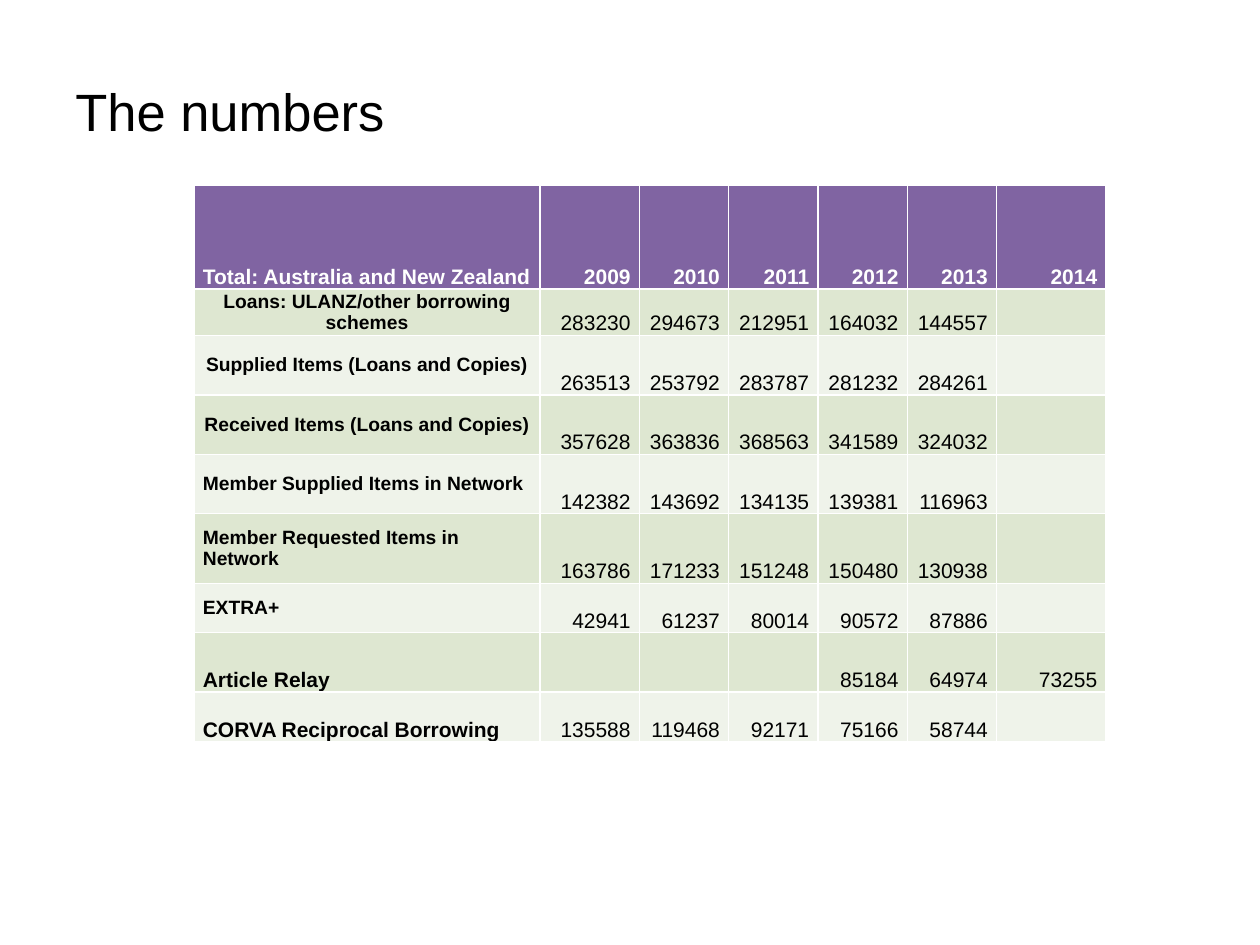
from pptx import Presentation
from pptx import util as u
from pptx.dml.color import RGBColor
from pptx.enum import text

COLORS = {"ink": "000000", "paper": "FFFFFF", "header": "8064A2",
          "odd": "DEE7D1", "even": "EFF3EA"}
FONT = "Arial"
WIDTH, HEIGHT = u.Inches(10), u.Inches(7.5)

# Relative column widths and row heights, scaled to the table's box
COLUMNS = [2.75, 0.79, 0.71, 0.71, 0.71, 0.71, 0.87]
ROWS = [0.82, 0.36, 0.47, 0.47, 0.47, 0.55, 0.39, 0.47, 0.39]

LEFT, CENTER, RIGHT = (text.PP_ALIGN.LEFT, text.PP_ALIGN.CENTER,
                       text.PP_ALIGN.RIGHT)
MIDDLE, BOTTOM = text.MSO_ANCHOR.MIDDLE, text.MSO_ANCHOR.BOTTOM

HEADER = ["Total: Australia and New Zealand",
          2009, 2010, 2011, 2012, 2013, 2014]
# Label, its size, alignment and anchor, then the yearly values
SERVICES = [
    ("Loans: ULANZ/other borrowing schemes", 11, CENTER, MIDDLE,
     [283230, 294673, 212951, 164032, 144557, ""]),
    ("Supplied Items (Loans and Copies)", 11, CENTER, MIDDLE,
     [263513, 253792, 283787, 281232, 284261, ""]),
    ("Received Items (Loans and Copies)", 11, CENTER, MIDDLE,
     [357628, 363836, 368563, 341589, 324032, ""]),
    ("Member Supplied Items in Network", 11, LEFT, MIDDLE,
     [142382, 143692, 134135, 139381, 116963, ""]),
    ("Member Requested Items in Network", 11, LEFT, MIDDLE,
     [163786, 171233, 151248, 150480, 130938, ""]),
    ("EXTRA+", 11, LEFT, MIDDLE,
     [42941, 61237, 80014, 90572, 87886, ""]),
    ("Article Relay", 12, LEFT, BOTTOM,
     ["", "", "", 85184, 64974, 73255]),
    ("CORVA Reciprocal Borrowing", 12, LEFT, BOTTOM,
     [135588, 119468, 92171, 75166, 58744, ""]),
]


def share_box(left, top, width, height):
    """Turn shares of the slide's size into lengths."""
    return (int(left * WIDTH), int(top * HEIGHT),
            int(width * WIDTH), int(height * HEIGHT))


def style_paragraph(p, size, color, bold=False, align=LEFT):
    p.alignment = align
    p.font.name = FONT
    p.font.size = u.Pt(size)
    p.font.bold = bold
    p.font.color.rgb = RGBColor.from_string(COLORS[color])


def add_title(slide, box, words):
    tf = slide.shapes.add_textbox(*box).text_frame
    tf.word_wrap = True
    tf.margin_top = u.Inches(0.1)
    p = tf.paragraphs[0]
    p.text = words
    style_paragraph(p, 30, "ink")


def fill_cell(cell, value, fill, size=12, color="ink", bold=False,
              align=RIGHT, anchor=BOTTOM):
    cell.fill.solid()
    cell.fill.fore_color.rgb = RGBColor.from_string(COLORS[fill])
    cell.margin_left = cell.margin_right = u.Inches(0.07)
    cell.margin_top = cell.margin_bottom = 0
    cell.vertical_anchor = anchor
    p = cell.text_frame.paragraphs[0]
    if value != "":
        p.text = str(value)
    style_paragraph(p, size, color, bold, align)


def add_numbers_table(slide, box):
    table = slide.shapes.add_table(len(ROWS), len(COLUMNS), *box).table
    for column, weight in zip(table.columns, COLUMNS):
        column.width = int(box[2] * weight / sum(COLUMNS))
    for row, weight in zip(table.rows, ROWS):
        row.height = int(box[3] * weight / sum(ROWS))

    for c, value in enumerate(HEADER):
        fill_cell(table.cell(0, c), value, "header", color="paper", bold=True,
                  align=RIGHT if c else LEFT)
    for r, (label, size, align, anchor, values) in enumerate(SERVICES, 1):
        band = "odd" if r % 2 else "even"
        fill_cell(table.cell(r, 0), label, band, size, bold=True,
                  align=align, anchor=anchor)
        for c, value in enumerate(values, 1):
            fill_cell(table.cell(r, c), value, band)


def main():
    prs = Presentation()
    prs.slide_width, prs.slide_height = WIDTH, HEIGHT
    slide = prs.slides.add_slide(prs.slide_layouts[6])
    add_title(slide, share_box(0.05, 0.07, 0.9, 0.12), "The numbers")
    add_numbers_table(slide, share_box(0.154, 0.196, 0.724, 0.588))
    prs.save("out.pptx")


if __name__ == "__main__":
    main()
